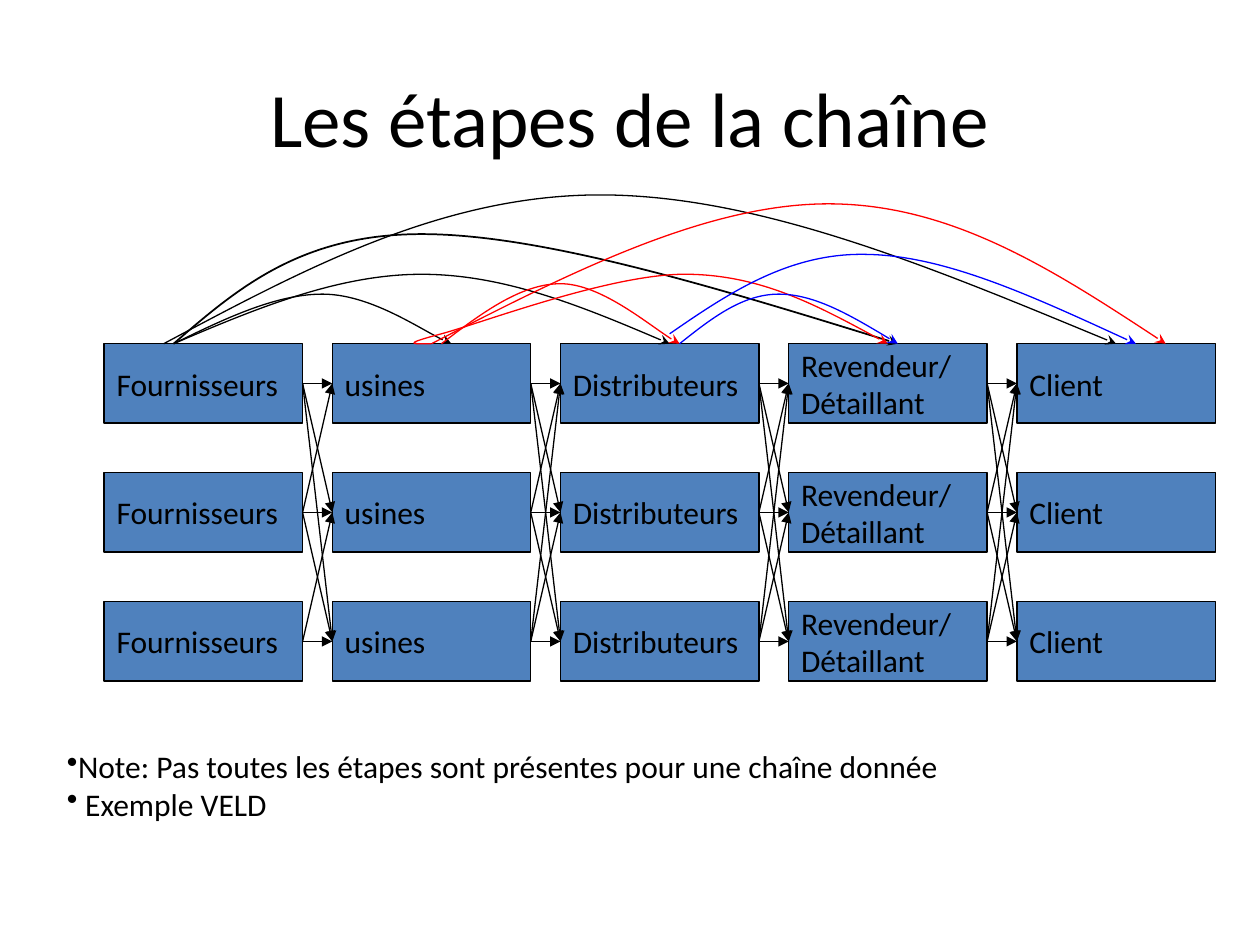
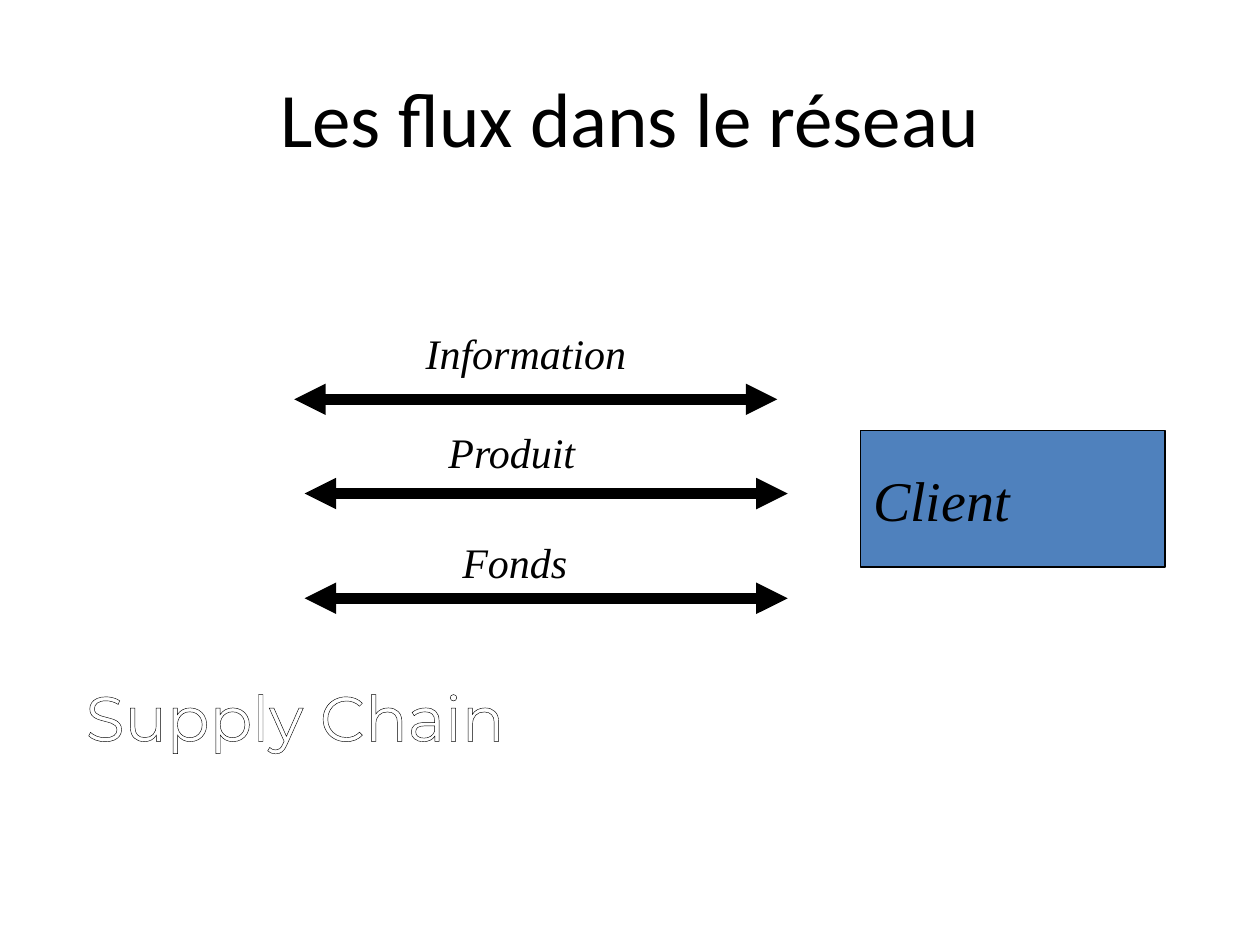
import itertools

import pptx
import pptx.dml.color
import pptx.enum.shapes
import pptx.enum.text
import pptx.oxml
import pptx.oxml.ns
import pptx.util
from pptx.util import Cm

BLACK = pptx.dml.color.RGBColor(0x00, 0x00, 0x00)
WHITE = pptx.dml.color.RGBColor(0xFF, 0xFF, 0xFF)
RED = pptx.dml.color.RGBColor(0xFF, 0x00, 0x00)
BLUE = pptx.dml.color.RGBColor(0x00, 0x00, 0xFF)
BOX_FILL = pptx.dml.color.RGBColor(0x4F, 0x81, 0xBD)
SANS, SERIF, DISPLAY = "Calibri", "Times New Roman", "Montserrat"
LEFT = pptx.enum.text.PP_ALIGN.LEFT
CENTER = pptx.enum.text.PP_ALIGN.CENTER
MIDDLE = pptx.enum.text.MSO_ANCHOR.MIDDLE
TOP = pptx.enum.text.MSO_ANCHOR.TOP

STAGES = ["Fournisseurs", "usines", "Distributeurs", "Revendeur/\nDétaillant", "Client"]
ROWS = 3
BOX_TOP = 6.93

# Skips between stages: colour, line width, start point, then Bézier points (cm)
SKIPS = [
    (BLACK, 0.75, [(3.5, BOX_TOP), (4.52, 6.43), (5.56, 5.93), (6.5, 5.93),
                   (7.44, 5.93), (8.66, 6.76), (9.1, BOX_TOP)]),
    (BLACK, 1, [(3.5, BOX_TOP), (4.78, 5.82), (6.06, 4.72), (8.5, 4.72),
                (10.92, 4.72), (14.52, 5.82), (18.1, BOX_TOP)]),
    (BLACK, 0.75, [(3.5, BOX_TOP), (5.16, 6.22), (6.82, 5.53), (8.5, 5.53),
                   (10.16, 5.53), (11.84, 6.22), (13.5, BOX_TOP)]),
    (BLACK, 0.75, [(3.3, BOX_TOP), (6.1, 5.44), (8.9, 3.93), (12.1, 3.93),
                   (15.3, 3.93), (18.9, 5.44), (22.5, BOX_TOP)]),
    (RED, 0.75, [(8.9, BOX_TOP), (9.7, 6.32), (10.5, 5.72), (11.3, 5.72),
                 (12.1, 5.72), (13.3, 6.73), (13.7, BOX_TOP)]),
    (RED, 0.75, [(8.7, BOX_TOP), (8.36, BOX_TOP), (8.03, 6.96), (8.9, 6.73),
                 (9.75, 6.5), (12.4, 5.49), (13.9, 5.53),
                 (15.4, 5.56), (16.64, 6.25), (17.9, BOX_TOP)]),
    (RED, 0.75, [(8.7, BOX_TOP), (11.46, 5.51), (14.22, 4.11), (16.7, 4.11),
                 (19.18, 4.11), (21.34, 5.51), (23.5, BOX_TOP)]),
    (BLUE, 0.75, [(13.7, BOX_TOP), (14.33, 6.43), (14.96, 5.93), (15.7, 5.93),
                  (16.43, 5.93), (17.27, 6.43), (18.1, BOX_TOP)]),
    (BLUE, 0.75, [(13.5, 6.73), (14.7, 5.9), (15.93, 5.08), (17.5, 5.13),
                  (19.08, 5.16), (20.98, 6.05), (22.9, BOX_TOP)]),
]

# Flows: label, label left, top, width, arrow left, arrow height (cm)
FLOWS = [
    ("Information", 8.33, 6.48, 4.8, 5.93, 8.05),
    ("Produit", 8.79, 8.47, 3.15, 6.14, 9.95),
    ("Fonds", 9.07, 10.69, 2.72, 6.14, 12.06),
]


def add_xml(parent, tag, **attributes):
    child = parent.makeelement(pptx.oxml.ns.qn(tag), attributes)
    parent.append(child)
    return child


class Deck:
    def __init__(self):
        self.presentation = pptx.Presentation()
        self.presentation.slide_width = Cm(25.4)
        self.presentation.slide_height = Cm(19.05)
        self.slide = None

    def new_slide(self, title):
        self.slide = self.presentation.slides.add_slide(self.presentation.slide_layouts[6])
        self.text(title, 1.27, 0.76, 22.86, 3.18, size=44, align=CENTER, anchor=MIDDLE)

    def fill_text(self, frame, content, size, font=SANS, italic=None, color=BLACK,
                  align=LEFT, anchor=TOP):
        frame.word_wrap = True
        frame.vertical_anchor = anchor
        frame.text = content
        for paragraph in frame.paragraphs:
            paragraph.alignment = align
            paragraph.font.name = font
            paragraph.font.size = pptx.util.Pt(size)
            paragraph.font.italic = italic
            paragraph.font.color.rgb = color

    def text(self, content, left, top, width, height, **style):
        label = self.slide.shapes.add_textbox(Cm(left), Cm(top), Cm(width), Cm(height))
        self.fill_text(label.text_frame, content, **style)
        return label.text_frame.paragraphs

    def bullets(self, content, *place, **style):
        for paragraph in self.text(content, *place, **style):
            properties = paragraph._p.get_or_add_pPr()
            properties.set("marL", "0")
            properties.set("indent", "0")
            bullet = properties.makeelement(pptx.oxml.ns.qn("a:buChar"), {"char": "•"})
            properties.insert(0, bullet)

    def outlined(self, content, *place, **style):
        for paragraph in self.text(content, *place, **style):
            run = paragraph.runs[0]
            run.font.color.rgb = style["color"]
            properties = run._r.get_or_add_rPr()
            outline = properties.makeelement(pptx.oxml.ns.qn("a:ln"), {"w": "9525"})
            properties.insert(0, outline)
            add_xml(add_xml(outline, "a:solidFill"), "a:srgbClr", val=str(BLACK))

    def box(self, content, left, top, width, height, line=0.75, **style):
        box = self.slide.shapes.add_shape(
            pptx.enum.shapes.MSO_SHAPE.RECTANGLE, Cm(left), Cm(top), Cm(width), Cm(height))
        box.shadow.inherit = False
        box.fill.solid()
        box.fill.fore_color.rgb = BOX_FILL
        self.stroke(box, BLACK, line)
        self.fill_text(box.text_frame, content, anchor=MIDDLE, **style)
        return box

    def stroke(self, shape, color, width, head=None, tail=None):
        shape.line.color.rgb = color
        shape.line.width = pptx.util.Pt(width)
        line = shape.line._get_or_add_ln()
        for tag, arrow in (("a:headEnd", head), ("a:tailEnd", tail)):
            if arrow:
                add_xml(line, tag, type=arrow)

    def arrow(self, start=(0, 0), end=(0, 0), width=0.75, head=None):
        arrow = self.slide.shapes.add_connector(
            pptx.enum.shapes.MSO_CONNECTOR.STRAIGHT,
            *(Cm(value) for value in (*start, *end)))
        self.stroke(arrow, BLACK, width, head, "triangle")
        add_xml(arrow._element.spPr, "a:effectLst")
        return arrow

    def link(self, source, target):
        arrow = self.arrow()
        arrow.begin_connect(source, 3)
        arrow.end_connect(target, 1)

    def curve(self, color, width, points):
        start, *others = [(Cm(x), Cm(y)) for x, y in points]
        builder = self.slide.shapes.build_freeform(*start)
        builder.add_line_segments(others, close=False)
        curve = builder.convert_to_shape()
        curve.shadow.inherit = False
        curve.fill.background()
        self.stroke(curve, color, width, tail="stealth")
        # Every three straight segments become one Bézier segment
        segments = list(curve._element.iter(pptx.oxml.ns.qn("a:lnTo")))
        outline = segments[0].getparent()
        for first in range(0, len(segments), 3):
            bezier = add_xml(outline, "a:cubicBezTo")
            for segment in segments[first:first + 3]:
                bezier.append(segment[0])
                outline.remove(segment)


def chain_slide(deck):
    deck.new_slide("Les étapes de la chaîne")

    # Grid of stages
    stages = [[deck.box(name, 2.1 + 4.6 * column, BOX_TOP + 2.6 * row, 4, 1.6, size=18)
               for row in range(ROWS)]
              for column, name in enumerate(STAGES)]

    # Each stage feeds the next, save the last supplier and the first plant
    for sources, targets in itertools.pairwise(stages):
        for source, target in itertools.product(sources, targets):
            if (source, target) != (stages[0][-1], stages[1][0]):
                deck.link(source, target)

    for skip in SKIPS:
        deck.curve(*skip)

    deck.bullets("Note: Pas toutes les étapes sont présentes pour une chaîne donnée\n"
                 " Exemple VELD", 1.1, 14.93, 19.88, 1.78, size=18)


def flow_slide(deck):
    deck.new_slide("Les flux dans le réseau")
    deck.box("Client", 17.35, 8.68, 6.14, 2.75, line=1, size=32, font=SERIF, italic=True)

    # Flows in both directions
    for label, left, top, width, arrow_left, arrow_y in FLOWS:
        deck.arrow((arrow_left, arrow_y), (arrow_left + 9.74, arrow_y), 6, head="triangle")
        deck.text(label, left, top, width, 1.27, size=24, font=SERIF, italic=True)

    deck.outlined("Supply Chain", 1.48, 13.55, 17.15, 1.9, size=36, font=DISPLAY, color=WHITE)


def main():
    deck = Deck()
    chain_slide(deck)
    flow_slide(deck)
    deck.presentation.save("out.pptx")


if __name__ == "__main__":
    main()
